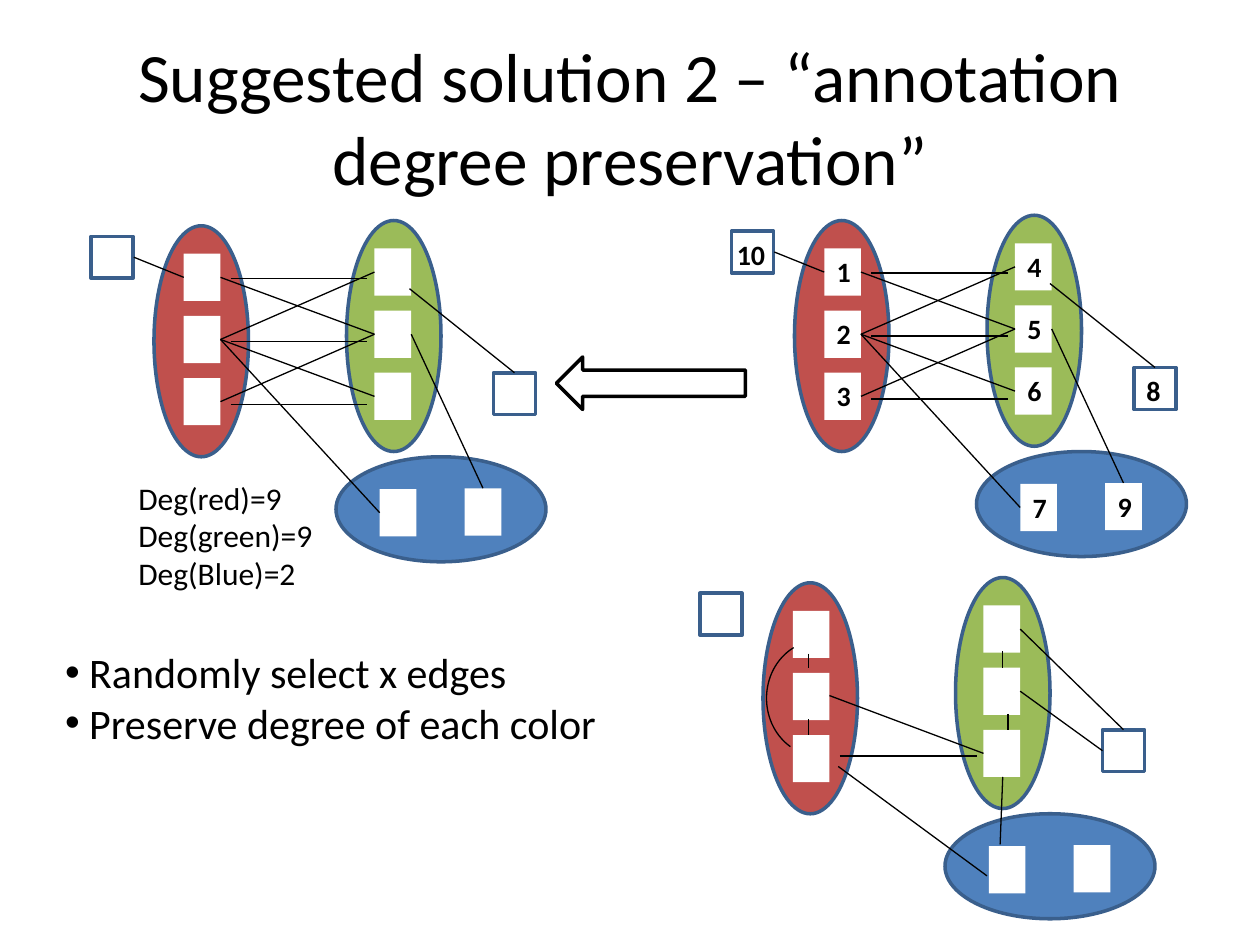
from typing import NamedTuple

from lxml.etree import SubElement
from pptx import Presentation
from pptx.dml.color import RGBColor
from pptx.enum.shapes import MSO_CONNECTOR, MSO_SHAPE
from pptx.enum.text import MSO_ANCHOR, MSO_AUTO_SIZE, PP_ALIGN
from pptx.oxml.ns import qn
from pptx.shapes.autoshape import Shape
from pptx.shapes.shapetree import GroupShapes
from pptx.text.text import TextFrame
from pptx.util import Pt

RED = RGBColor(0xC0, 0x50, 0x4D)
GREEN = RGBColor(0x9B, 0xBB, 0x59)
BLUE = RGBColor(0x4F, 0x81, 0xBD)
EDGE = RGBColor(0x3A, 0x5F, 0x8C)
BLACK = RGBColor(0, 0, 0)
WHITE = RGBColor(255, 255, 255)
FONT = "Calibri"


class Box(NamedTuple):
    left: float
    top: float
    width: float
    height: float


class Oval(NamedTuple):
    box: Box
    fill: RGBColor


class Node(NamedTuple):
    label: str
    box: Box


class Link(NamedTuple):
    x1: float
    y1: float
    x2: float
    y2: float


class Graph(NamedTuple):
    left: float
    top: float
    named: bool
    links: list[Link]
    arcs: list[Box]


STEP = 35.5
REDS = [19 + STEP * i for i in range(3)]
GREENS = [16 + STEP * i for i in range(3)]
MID = 13.5

OVALS = [
    Oval(Box(40, 3, 54, 132), RED),
    Oval(Box(144, 135, 120, 60), BLUE),
    Oval(Box(150, 0, 54, 132), GREEN),
]
NODES = [
    *(Node(str(i), Box(57, top, 21, 27)) for i, top in enumerate(REDS, 1)),
    *(Node(str(i), Box(166, top, 21, 27)) for i, top in enumerate(GREENS, 4)),
    Node("8", Box(234, 87, 21, 27)),
    Node("10", Box(0, 9, 36, 27)),
    Node("7", Box(169, 153.5, 21, 27)),
    Node("9", Box(217.5, 153, 21, 27)),
]
FRAMES = [Box(4, 9, 24, 24), Box(234, 87, 24, 24)]

BASE = [
    *(Link(84, 33 + 36 * i, 162, 33 + 36 * i) for i in range(3)),
    *(Link(78, REDS[i] + MID, 166, GREENS[j] + MID)
      for i, j in [(0, 1), (1, 0), (1, 2), (2, 1)]),
    Link(57, 32.5, 28.5, 21),
    Link(246, 87, 186, 39),
    Link(228, 153, 187, 65),
    Link(78, 68, 169, 167),
]
MIXED = [
    Link(83, 108, 168, 170.5),
    Link(177, 114, 175.5, 152.5),
    Link(187, 65, 234, 99),
    Link(177, 42, 177, 52),
    Link(180, 78, 180, 87),
    Link(187, 29.5, 246, 87),
    Link(84, 102, 162, 102),
    Link(78, 67.5, 166, 100.5),
    Link(66, 43.5, 66, 52),
    Link(66, 81, 66, 90),
]
FIRST = Graph(414, 123, True, BASE, [])
COPIES = [
    Graph(48, 126, False, BASE, []),
    Graph(396, 330, False, MIXED, [Box(42, 36, 60, 66)]),
]


def shift(box: Box, graph: Graph) -> Box:
    return box._replace(left=box.left + graph.left, top=box.top + graph.top)


def shape(pool: GroupShapes, kind: MSO_SHAPE, box: Box, fill: RGBColor | None,
          line: RGBColor | None, width: float = 2) -> Shape:
    item = pool.add_shape(kind, *map(Pt, box))
    item.shadow.inherit = False
    if fill is None:
        item.fill.background()
    else:
        item.fill.solid()
        item.fill.fore_color.rgb = fill
    if line is None:
        item.line.fill.background()
    else:
        item.line.color.rgb = line
        item.line.width = Pt(width)
    return item


def write(frame: TextFrame, lines: list[str], size: float, bold: bool = False,
          align: PP_ALIGN = PP_ALIGN.LEFT) -> None:
    frame.word_wrap = True
    frame.auto_size = MSO_AUTO_SIZE.NONE
    for i, line in enumerate(lines):
        para = frame.add_paragraph() if i else frame.paragraphs[0]
        para.alignment = align
        para.space_before = Pt(0)
        run = para.add_run()
        run.text = line
        run.font.name = FONT
        run.font.size = Pt(size)
        run.font.bold = bold
        run.font.color.rgb = BLACK


def join(pool: GroupShapes, link: Link, graph: Graph) -> None:
    wire = pool.add_connector(
        MSO_CONNECTOR.STRAIGHT,
        Pt(link.x1 + graph.left), Pt(link.y1 + graph.top),
        Pt(link.x2 + graph.left), Pt(link.y2 + graph.top))
    wire.line.color.rgb = BLACK
    wire.line.width = Pt(0.75)
    SubElement(wire._element.spPr, qn("a:effectLst"))


def draw(pool: GroupShapes, graph: Graph) -> None:
    for oval in OVALS:
        shape(pool, MSO_SHAPE.OVAL, shift(oval.box, graph), oval.fill, EDGE)
    for node in NODES:
        item = shape(pool, MSO_SHAPE.RECTANGLE, shift(node.box, graph), WHITE, None)
        if graph.named:
            item.text_frame.vertical_anchor = MSO_ANCHOR.TOP
            write(item.text_frame, [node.label], 16, True)
    for box in FRAMES:
        shape(pool, MSO_SHAPE.RECTANGLE, shift(box, graph), None, EDGE)
    for link in graph.links:
        join(pool, link, graph)
    for box in graph.arcs:
        arc = shape(pool, MSO_SHAPE.ARC, shift(box, graph), None, BLACK, 0.75)
        arc.adjustments[0] = 177.94
        arc.adjustments[1] = 35.65
        arc._element.spPr.xfrm.set("flipH", "1")


def place(item: Shape, box: Box) -> None:
    item.left, item.top, item.width, item.height = map(Pt, box)


def main() -> None:
    deck = Presentation()
    deck.slide_width, deck.slide_height = Pt(720), Pt(540)
    slide = deck.slides.add_slide(deck.slide_layouts[1])
    pool = slide.shapes

    title = pool.title
    place(title, Box(36, 21.6, 648, 90))
    title.text_frame.vertical_anchor = MSO_ANCHOR.MIDDLE
    write(title.text_frame,
          ["Suggested solution 2 – “annotation degree preservation”"],
          39.6, align=PP_ALIGN.CENTER)

    body = slide.placeholders[1]
    place(body, Box(30, 366, 330, 65.5))
    write(body.text_frame,
          [" Randomly select x edges", " Preserve degree of each color"], 24)
    for para in body.text_frame.paragraphs:
        props = para._p.get_or_add_pPr()
        props.set("marL", "0")
        props.set("indent", "0")
        SubElement(props, qn("a:buFont")).set("typeface", "Arial")
        SubElement(props, qn("a:buChar")).set("char", "•")

    draw(pool.add_group_shape().shapes, FIRST)
    shape(pool, MSO_SHAPE.LEFT_ARROW, Box(318, 204, 108, 30), None, BLACK)
    for graph in COPIES:
        draw(pool.add_group_shape().shapes, graph)

    note = pool.add_textbox(*map(Pt, Box(72, 270, 156, 72.5)))
    write(note.text_frame, ["Deg(red)=9", "Deg(green)=9", "Deg(Blue)=2"], 18)

    deck.save("out.pptx")


if __name__ == "__main__":
    main()
